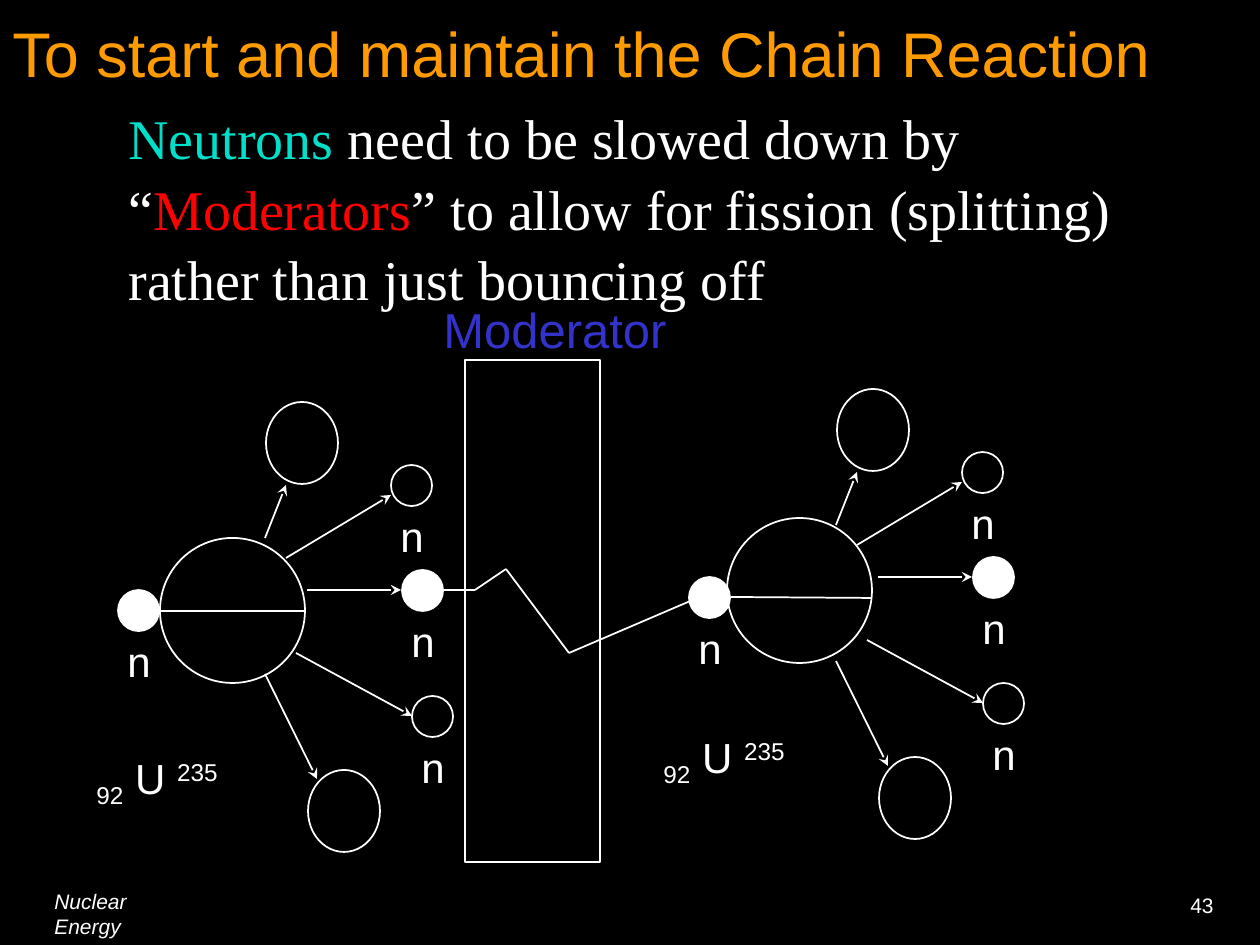
from itertools import pairwise

from lxml import etree
from pptx import Presentation, util as u
from pptx.dml.color import RGBColor
from pptx.enum import shapes, text
from pptx.oxml.ns import qn

PX = 914400 / 126
WHITE = "FFFFFF"


def px(*values):
    return [u.Emu(round(v * PX)) for v in values]


def rgb(value):
    return RGBColor.from_string(value)


def run(p, content, size=24, font="Arial", color=WHITE, italic=False, baseline=0):
    r = p.add_run()
    r.text = content
    r.font.size = u.Pt(size)
    r.font.name = font
    r.font.italic = italic
    r.font.color.rgb = rgb(color)
    if baseline:
        r._r.get_or_add_rPr().set("baseline", str(baseline * 1000))


class Board:
    line_color = WHITE
    line_width = u.Pt(1)

    def __init__(self, prs):
        self.s = prs.slides.add_slide(prs.slide_layouts[6])
        fill = self.s.background.fill
        fill.solid()
        fill.fore_color.rgb = rgb("000000")

    def label(self, x, y, w, h, runs, spacing=1.0, anchor=text.MSO_ANCHOR.TOP):
        tf = self.s.shapes.add_textbox(*px(x, y, w, h)).text_frame
        tf.word_wrap = True
        tf.vertical_anchor = anchor
        p = tf.paragraphs[0]
        p.line_spacing = spacing
        for content, style in runs:
            run(p, content, **style)

    def shape(self, kind, x, y, w, h, fill=None):
        sp = self.s.shapes.add_shape(kind, *px(x, y, w, h))
        sp.shadow.inherit = False
        sp.line.color.rgb = rgb(self.line_color)
        sp.line.width = self.line_width
        if fill:
            sp.fill.solid()
            sp.fill.fore_color.rgb = rgb(fill)
        else:
            sp.fill.background()

    def circle(self, x, y, w, h, fill=None):
        self.shape(shapes.MSO_SHAPE.OVAL, x, y, w, h, fill)

    def line(self, start, end, arrow=False):
        c = self.s.shapes.add_connector(
            shapes.MSO_CONNECTOR.STRAIGHT, *px(*start, *end))
        c.line.color.rgb = rgb(self.line_color)
        c.line.width = self.line_width
        if arrow:
            etree.SubElement(c.line._get_or_add_ln(), qn("a:tailEnd"), type="stealth")
        etree.SubElement(c._element.spPr, qn("a:effectLst"))

    def neutron(self, x, y, fill=None):
        self.circle(x, y, 41, 41, fill)
        self.label(x - 3, y + 39, 49, 63, [("n", {})])

    def fission(self, dx, dy):
        for x, y in ((266, 402), (308, 770)):
            self.circle(x + dx, y + dy, 72, 82)
        for x, y, fill in ((391, 465, None), (412, 696, None), (402, 570, WHITE)):
            self.neutron(x + dx, y + dy, fill)
        for x1, y1, x2, y2 in ((265, 538, 286, 485), (286, 558, 391, 495),
                               (307, 590, 401, 590), (296, 653, 412, 716),
                               (265, 674, 317, 779)):
            self.line((x1 + dx, y1 + dy), (x2 + dx, y2 + dy), arrow=True)

    def uranium(self, x, y, label_y):
        self.circle(x, y, 145, 145)
        self.label(x - 76, label_y, 197, 63, [
            ("92", {"baseline": -25}), (" U ", {}), ("235", {"baseline": 30})])


def main():
    prs = Presentation()
    prs.slide_width, prs.slide_height = px(1260, 945)
    b = Board(prs)

    b.label(1178, 886, 50, 38, [("43", {"size": 12})])
    b.label(42, 882, 165, 38, [("Nuclear Energy", {"size": 12, "italic": True})])
    b.label(0, 0, 1239, 105, [("To start and maintain the Chain Reaction",
                               {"size": 36, "color": "FE9B03"})],
            anchor=text.MSO_ANCHOR.MIDDLE)

    body = {"size": 32, "font": "Times New Roman"}
    b.label(116, 94, 1029, 214, [
        ("Neutrons", {**body, "color": "00DFCA"}),
        (" need to be slowed down by “", body),
        ("Moderators", {**body, "color": "FF0000"}),
        ("” to allow for fission (splitting) rather than just bouncing off", body),
    ], spacing=1.05)

    b.fission(0, 0)
    b.line((160, 611), (306, 611))
    b.uranium(160, 538, 746)

    b.shape(shapes.MSO_SHAPE.RECTANGLE, 465, 360, 135, 502)
    b.label(431, 293, 250, 72, [("Moderator", {"size": 28, "color": "3333CC"})])
    slowed_path = [(443, 590), (475, 590), (506, 569), (569, 653), (716, 590)]
    for start, end in pairwise(slowed_path):
        b.line(start, end, arrow=end == slowed_path[-1])

    b.neutron(118, 590, WHITE)
    b.fission(571, -13)
    b.line((731, 597), (872, 598))
    b.neutron(689, 577, WHITE)
    b.uranium(727, 518, 725)

    prs.save("out.pptx")


if __name__ == "__main__":
    main()
